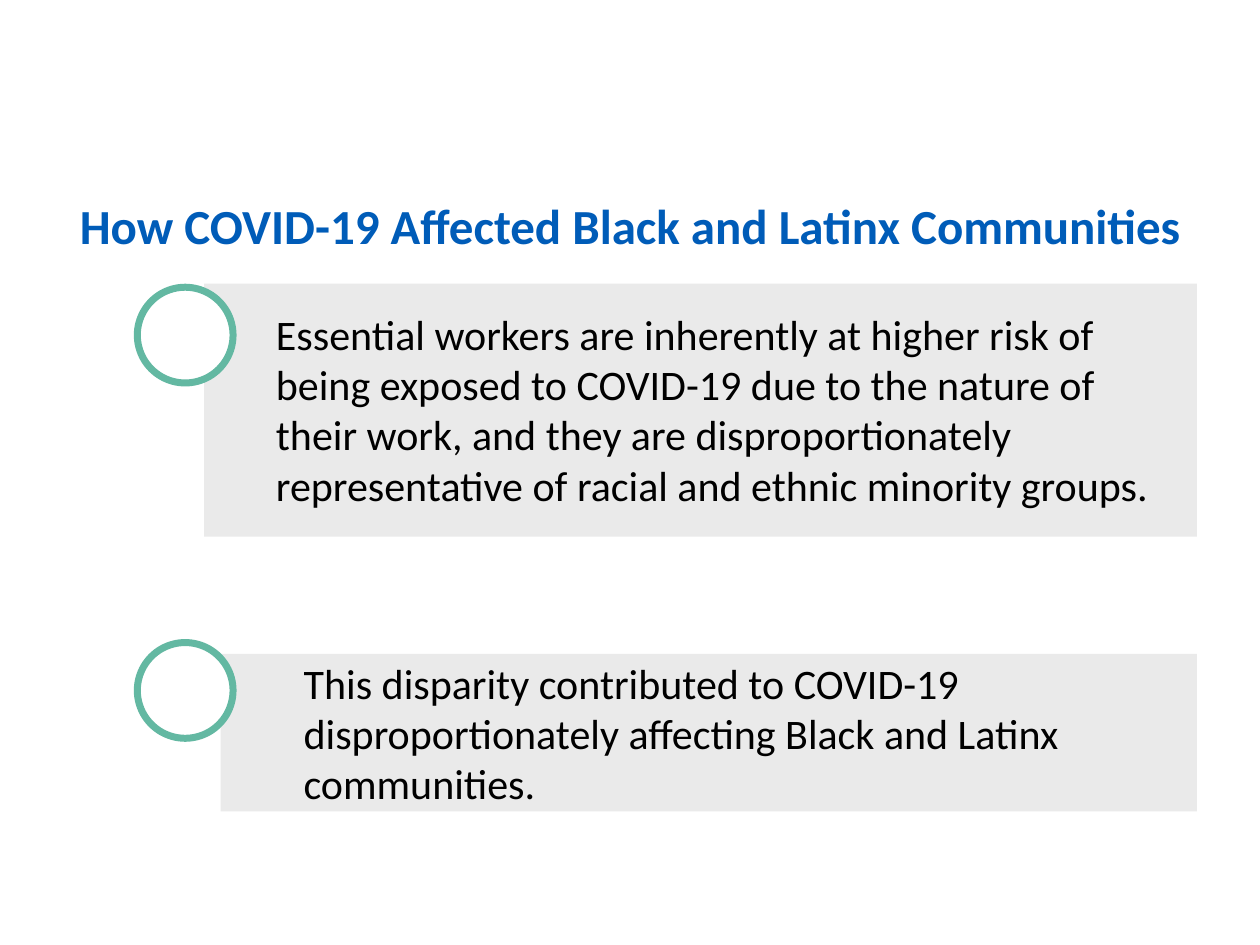
from pptx import Presentation
from pptx.dml.color import RGBColor
from pptx.enum.shapes import MSO_SHAPE
from pptx.enum.text import MSO_ANCHOR, PP_ALIGN
from pptx.util import Inches, Pt

RECT, OVAL = MSO_SHAPE.RECTANGLE, MSO_SHAPE.OVAL
MIDDLE = MSO_ANCHOR.MIDDLE
LEFT, CENTER = PP_ALIGN.LEFT, PP_ALIGN.CENTER

COLORS = {"title": "005CB8", "text": "000000", "panel": "EAEAEA",
          "ring": "63B8A2", "white": "FFFFFF"}
FORMATS = {
    "title": {"name": "Calibri", "size": Pt(28), "bold": True},
    "text": {"name": "Calibri", "size": Pt(24), "bold": False},
}


class SlideBuilder:
    """Holds the style and the current slide."""

    def __init__(self, slide):
        self.s = slide

    def color(self, name):
        return RGBColor.from_string(COLORS[name])

    def shape(self, kind, box, fill, line=None, width=0):
        sp = self.s.shapes.add_shape(kind, *map(Inches, box))
        sp.shadow.inherit = False
        sp.fill.solid()
        sp.fill.fore_color.rgb = self.color(fill)
        if line:
            sp.line.color.rgb = self.color(line)
            sp.line.width = Pt(width)
        else:
            sp.line.fill.background()

    def text(self, box, words, style, inset, align=LEFT, spacing=None):
        tf = self.s.shapes.add_textbox(*map(Inches, box)).text_frame
        tf.word_wrap = True
        tf.vertical_anchor = MIDDLE
        for side in ("left", "top", "right", "bottom"):
            setattr(tf, f"margin_{side}", Inches(inset))
        p = tf.paragraphs[0]
        p.alignment = align
        if spacing:
            p.line_spacing = Pt(spacing)
        r = p.add_run()
        r.text = words
        for key, value in FORMATS[style].items():
            setattr(r.font, key, value)
        r.font.color.rgb = self.color(style)

    def point(self, panel, text_box, ring_top, words):
        self.shape(RECT, panel, "panel")
        self.text(text_box, words, "text", 0.04)
        self.shape(OVAL, (1.09, ring_top, 0.76, 0.76), "white", "ring", 4)


def main():
    prs = Presentation()
    prs.slide_width, prs.slide_height = Inches(10), Inches(7.5)
    b = SlideBuilder(prs.slides.add_slide(prs.slide_layouts[6]))

    # Title
    b.text((0.5, 1, 9, 1.25),
           "How COVID-19 Affected Black and Latinx Communities",
           "title", 0.05, CENTER, 57)

    # Points: grey panel, text and ring marker
    b.point((1.62, 2.25, 7.88, 2.01), (2.15, 2.8, 7.15, 0.89), 2.28,
            "Essential workers are inherently at higher risk of being exposed "
            "to COVID-19 due to the nature of their work, and they are "
            "disproportionately representative of racial and ethnic minority "
            "groups.")
    b.point((1.75, 5.19, 7.75, 1.25), (2.37, 5.37, 7.13, 0.89), 5.1,
            "This disparity contributed to COVID-19 disproportionately "
            "affecting Black and Latinx communities.")

    prs.save("out.pptx")


if __name__ == "__main__":
    main()
